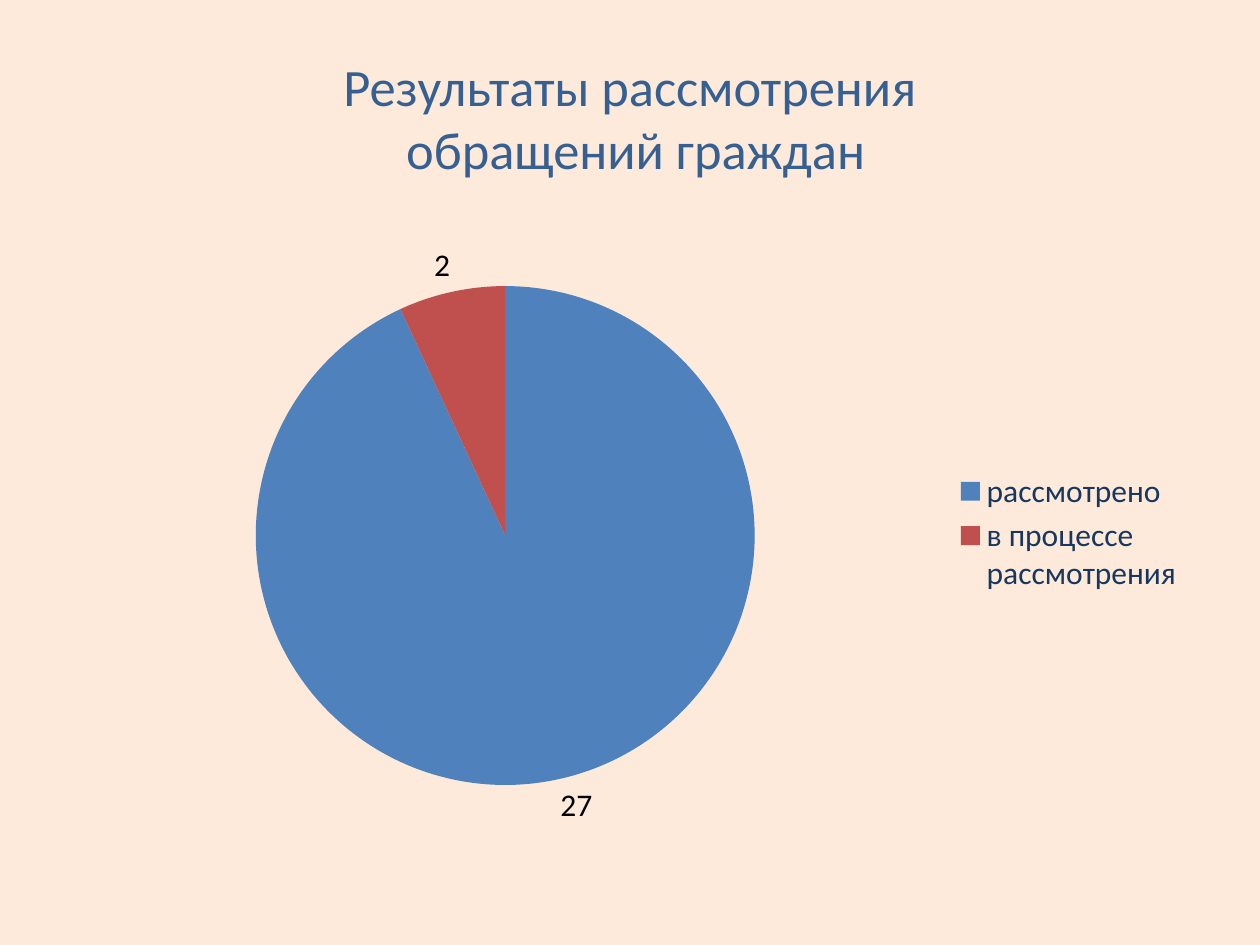
from lxml import etree
from pptx import Presentation
from pptx.chart.data import CategoryChartData
from pptx.dml.color import RGBColor
from pptx.enum.chart import XL_CHART_TYPE as ChartType
from pptx.enum.chart import XL_LABEL_POSITION as LabelPos
from pptx.enum.chart import XL_LEGEND_POSITION as LegendPos
from pptx.enum.text import MSO_ANCHOR, PP_ALIGN
from pptx.oxml.ns import qn
from pptx.util import Cm, Pt

# Content
TITLE = "Результаты рассмотрения\v обращений граждан"
SERIES = "Обращения"
RESULTS = [("рассмотрено", 27, "blue"), ("в процессе рассмотрения", 2, "red")]

FONT = "Calibri"
COLORS = {
    "background": "FDEADA",
    "title": "376092",
    "labels": "000000",
    "legend": "17375E",
    "blue": "4F81BD",
    "red": "C0504D",
}
# Pie area as fractions of the chart frame
PLOT_AREA = {"x": 0.17, "y": 0.1, "w": 0.44, "h": 0.81}


def rgb(name):
    return RGBColor.from_string(COLORS[name])


def style(font, size, color):
    font.name = FONT
    font.size = Pt(size)
    font.color.rgb = rgb(color)


def place_plot(chart, area):
    """Fix the inner plot area, which has no public method."""
    plot_area = chart.plots[0]._element.getparent()
    for old in plot_area.findall(qn("c:layout")):
        plot_area.remove(old)
    layout = etree.Element(qn("c:layout"))
    plot_area.insert(0, layout)
    manual = etree.SubElement(layout, qn("c:manualLayout"))
    settings = {"layoutTarget": "inner", "xMode": "edge", "yMode": "edge", **area}
    for tag, value in settings.items():
        etree.SubElement(manual, qn(f"c:{tag}")).set("val", str(value))


prs = Presentation()
prs.slide_width, prs.slide_height = Cm(25.4), Cm(19.05)
s = prs.slides.add_slide(prs.slide_layouts[5])
s.background.fill.solid()
s.background.fill.fore_color.rgb = rgb("background")

# Title
title = s.shapes.title
title.left, title.top, title.width, title.height = Cm(1.27), Cm(0.76), Cm(22.86), Cm(3.18)
tf = title.text_frame
tf.text = TITLE
tf.vertical_anchor = MSO_ANCHOR.MIDDLE
p = tf.paragraphs[0]
p.alignment = PP_ALIGN.CENTER
for r in p.runs:
    style(r.font, 30, "title")

# Pie chart
data = CategoryChartData()
data.categories = [name for name, _, _ in RESULTS]
data.add_series(SERIES, [value for _, value, _ in RESULTS])
chart = s.shapes.add_chart(
    ChartType.PIE, Cm(1.27), Cm(4.45), Cm(22.86), Cm(12.57), data
).chart
chart.has_title = False
style(chart.font, 18, "labels")
place_plot(chart, PLOT_AREA)

plot = chart.plots[0]
plot.vary_by_categories = True
for i, (_, _, color) in enumerate(RESULTS):
    fill = plot.series[0].points[i].format.fill
    fill.solid()
    fill.fore_color.rgb = rgb(color)

# Value labels
plot.has_data_labels = True
labels = plot.data_labels
labels.show_value = True
labels.show_percentage = False
labels.position = LabelPos.OUTSIDE_END
style(labels.font, 18, "labels")

# Legend
chart.has_legend = True
chart.legend.position = LegendPos.RIGHT
chart.legend.include_in_layout = False
style(chart.legend.font, 18, "legend")

prs.save("out.pptx")
